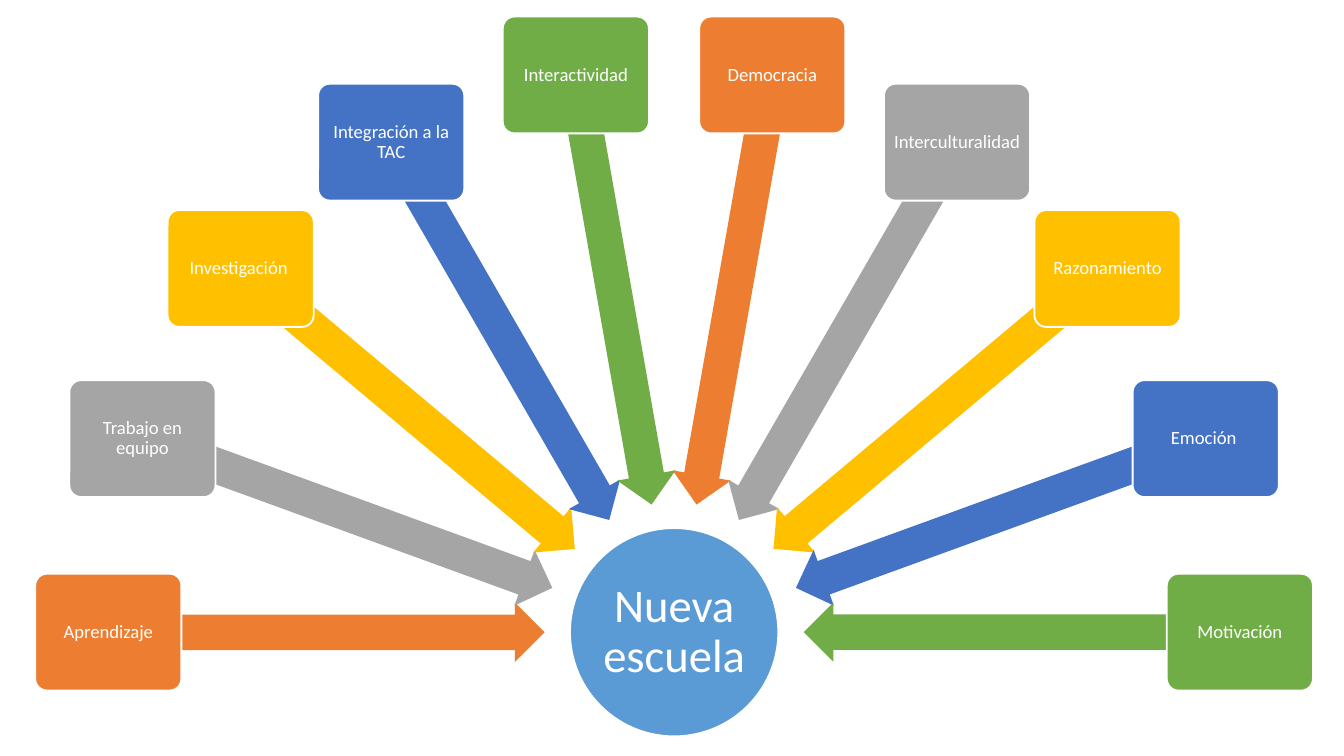
import math
from dataclasses import dataclass

from pptx import Presentation
from pptx.dml.color import RGBColor
from pptx.enum import shapes, text
from pptx.util import Pt


@dataclass(frozen=True)
class Theme:
    font: str = "Calibri"
    white: str = "FFFFFF"
    hub: str = "5B9BD5"
    orange: str = "ED7D31"
    gray: str = "A5A5A5"
    gold: str = "FFC000"
    blue: str = "4472C4"
    green: str = "70AD47"
    hub_size: int = 25
    label_size: int = 10


THEME = Theme()
CYCLE = (THEME.orange, THEME.gray, THEME.gold, THEME.blue, THEME.green)
TOPICS = (
    "Aprendizaje", "Trabajo en equipo", "Investigación ",
    "Integración a la TAC", "Interactividad", "Democracia",
    "Interculturalidad", "Razonamiento", "Emoción ", "Motivación",
)

# Lengths in points
HUB_DIAMETER = 111.6
CARD_WIDTH, CARD_HEIGHT = 78.3, 62.6
ARROW_LENGTH, ARROW_HEIGHT = 233.3, 31.7
ARROW_RADIUS = 186.1


def write_text(shape, wording, *, size, color=THEME.white, inset=1.4):
    frame = shape.text_frame
    frame.word_wrap = True
    frame.vertical_anchor = text.MSO_ANCHOR.MIDDLE
    frame.margin_left = frame.margin_right = Pt(inset)
    frame.margin_top = frame.margin_bottom = Pt(inset)
    paragraph = frame.paragraphs[0]
    paragraph.alignment = text.PP_ALIGN.CENTER
    paragraph.line_spacing = 0.9
    run = paragraph.add_run()
    run.text = wording
    run.font.name = THEME.font
    run.font.size = Pt(size)
    run.font.color.rgb = RGBColor.from_string(color)


def add_centered(slide, kind, center, size, fill, outline=None):
    """Add a filled preset shape around its center point."""
    (x, y), (width, height) = center, size
    shape = slide.shapes.add_shape(
        kind, Pt(x - width / 2), Pt(y - height / 2), Pt(width), Pt(height))
    shape.shadow.inherit = False
    shape.fill.solid()
    shape.fill.fore_color.rgb = RGBColor.from_string(fill)
    if outline:
        shape.line.color.rgb = RGBColor.from_string(outline)
        shape.line.width = Pt(1)
    else:
        shape.line.fill.background()
    return shape


def add_hub(slide, center, wording):
    hub = add_centered(slide, shapes.MSO_SHAPE.OVAL, center,
                       (HUB_DIAMETER, HUB_DIAMETER), THEME.hub, THEME.white)
    write_text(hub, wording, size=THEME.hub_size)


def add_spoke(slide, center, radius, angle, wording, color):
    """Add a topic card at an angle, with an arrow towards the hub."""
    def point_at(distance):
        turn = math.radians(angle)
        return (center[0] + distance * math.cos(turn),
                center[1] + distance * math.sin(turn))

    arrow = add_centered(slide, shapes.MSO_SHAPE.LEFT_ARROW,
                         point_at(ARROW_RADIUS),
                         (ARROW_LENGTH, ARROW_HEIGHT), color)
    arrow.adjustments[0] = 0.6
    arrow.adjustments[1] = 0.5
    arrow.rotation = angle % 360

    card = add_centered(slide, shapes.MSO_SHAPE.ROUNDED_RECTANGLE,
                        point_at(radius), (CARD_WIDTH, CARD_HEIGHT),
                        color, THEME.white)
    card.adjustments[0] = 0.1
    write_text(card, wording, size=THEME.label_size)


def add_radial_diagram(slide, left, top, width, height):
    """Fan the topics over a half circle around a hub at the bottom."""
    center = (left + width / 2, top + height - HUB_DIAMETER / 2)
    radius = (width - CARD_WIDTH) / 2
    add_hub(slide, center, "Nueva escuela ")
    step = 180 / (len(TOPICS) - 1)
    for index, topic in enumerate(TOPICS):
        add_spoke(slide, center, radius, 180 + index * step, topic,
                  CYCLE[index % len(CYCLE)])


def main():
    presentation = Presentation()
    presentation.slide_width = Pt(720)
    presentation.slide_height = Pt(405)
    slide = presentation.slides.add_slide(presentation.slide_layouts[6])
    add_radial_diagram(slide, left=18.9, top=8.9, width=684.5, height=385.6)
    presentation.save("out.pptx")


if __name__ == "__main__":
    main()
